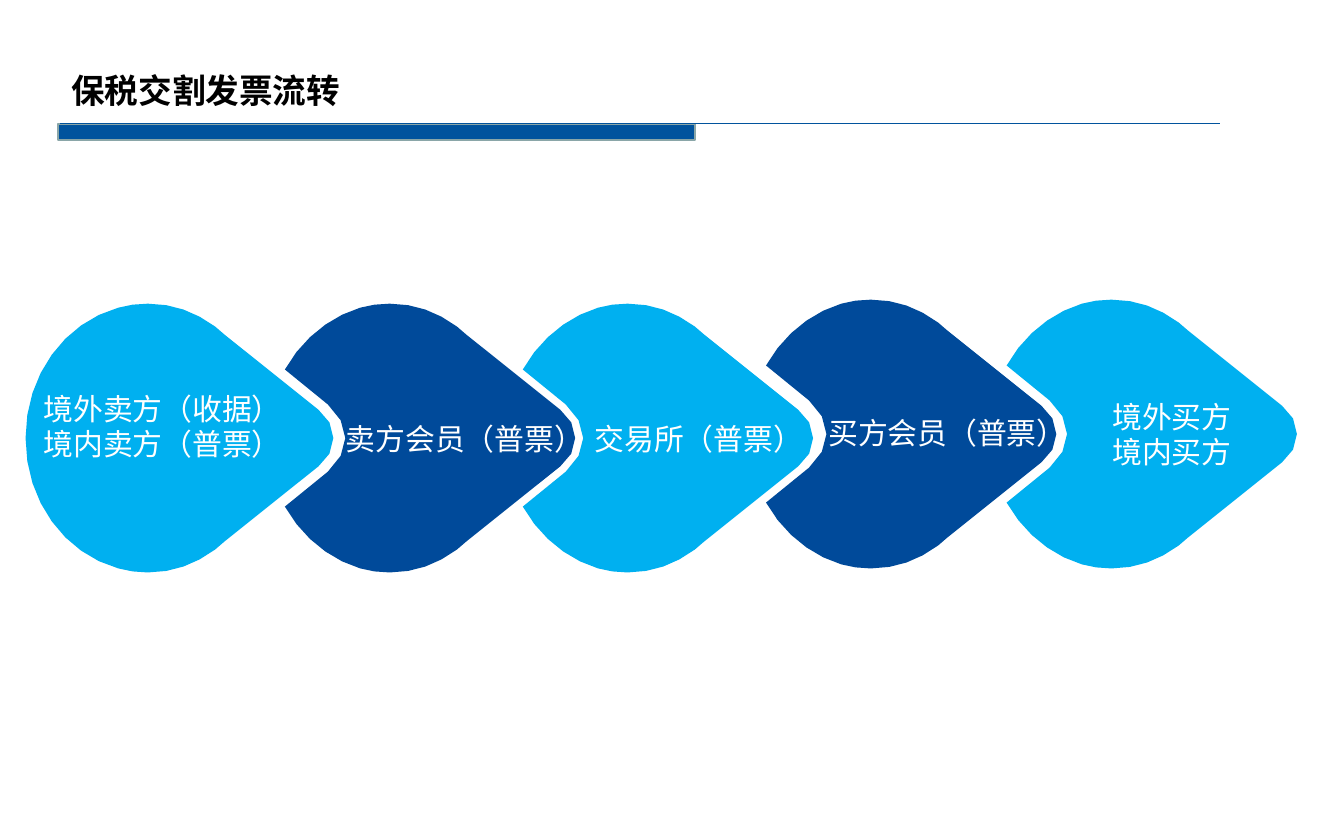
from math import ceil, dist
from typing import NamedTuple

from lxml.etree import SubElement
from pptx import Presentation
from pptx.dml.color import RGBColor
from pptx.enum.shapes import MSO_CONNECTOR as Connector, MSO_SHAPE as Shape
from pptx.enum.text import MSO_ANCHOR as Anchor, MSO_AUTO_SIZE as AutoSize, PP_ALIGN as Align
from pptx.oxml.ns import qn
from pptx.util import Inches, Pt

FONT = "Noto Sans CJK SC"
COLORS = {
    "title": "000000",
    "label": "FFFFFF",
    "rule": "01539D",
    "bar_edge": "8AA6A8",
    "light": "00B0F0",
    "dark": "004A9A",
}
LABEL_WIDTH, LABEL_HEIGHT = 2.18, 0.44
CURVE_STEP = 0.15

Point = tuple[float, float]


class Stage(NamedTuple):
    center: Point
    color: str
    label_center: Point
    lines: list[str]


STAGES = [
    Stage((1.10, 3.26), "light", (1.21, 3.17), ["境外卖方（收据）", "境内卖方（普票）"]),
    Stage((2.90, 3.26), "dark", (3.46, 3.26), ["卖方会员（普票）"]),
    Stage((4.67, 3.26), "light", (5.20, 3.26), ["交易所（普票）"]),
    Stage((6.48, 3.23), "dark", (7.05, 3.22), ["买方会员（普票）"]),
    Stage((8.27, 3.23), "light", (8.72, 3.23), ["境外买方", "境内买方"]),
]

# Upper half of a drop around its centre, from the tip to the left;
# each segment is one end point or two Bezier controls and an end point
TIP = (1.38, 0)
SHOULDER = [
    [(1.38, -0.08), (1.34, -0.16), (1.27, -0.21)],
    [(0.57, -0.77)],
    [(0.50, -0.83)],
    [(0.35, -0.94), (0.19, -1), (0, -1)],
    [(-0.08, -1), (-0.15, -0.99), (-0.22, -0.97)],
]
ROUND_BACK = [[(-0.62, -0.86), (-0.91, -0.47), (-0.91, 0)]]
NOTCHED_BACK = [
    [(-0.45, -0.90), (-0.65, -0.74), (-0.78, -0.51)],
    [(-0.46, -0.25)],
    [(-0.38, -0.18), (-0.33, -0.09), (-0.33, 0)],
]


def rgb(name: str) -> RGBColor:
    return RGBColor.from_string(COLORS[name])


def write_text(shape, lines: list[str], *, size: float, color: str, bold: bool = False,
               align=Align.LEFT, anchor=Anchor.TOP, inset: Point = (0, 0)) -> None:
    frame = shape.text_frame
    frame.word_wrap = True
    frame.auto_size = AutoSize.NONE
    frame.vertical_anchor = anchor
    frame.margin_left = frame.margin_right = Inches(inset[0])
    frame.margin_top = frame.margin_bottom = Inches(inset[1])
    for index, line in enumerate(lines):
        paragraph = frame.add_paragraph() if index else frame.paragraphs[0]
        paragraph.alignment = align
        run = paragraph.add_run()
        run.text = line
        font = run.font
        font.size, font.bold, font.name = Pt(size), bold, FONT
        font.color.rgb = rgb(color)
        SubElement(run._r.get_or_add_rPr(), qn("a:ea"), typeface=FONT)


def trace(start: Point, segments: list[list[Point]]) -> list[Point]:
    """Turn lines and Bezier curves into points, with more of them on longer curves."""
    points = [start]
    for segment in segments:
        if len(segment) == 1:
            points.append(segment[0])
            continue
        corners = [points[-1], *segment]
        steps = ceil(dist(corners[0], corners[-1]) / CURVE_STEP)
        for step in range(1, steps + 1):
            t = step / steps
            weights = ((1 - t) ** 3, 3 * t * (1 - t) ** 2, 3 * t * t * (1 - t), t ** 3)
            x, y = (sum(w * c[axis] for w, c in zip(weights, corners)) for axis in (0, 1))
            points.append((x, y))
    return points


def draw_drop(slide, stage: Stage, back: list[list[Point]]) -> None:
    upper = trace(TIP, SHOULDER + back)
    lower = [(x, -y) for x, y in reversed(upper[1:-1])]
    center_x, center_y = stage.center
    outline = [(Inches(center_x + x), Inches(center_y + y)) for x, y in upper + lower]
    builder = slide.shapes.build_freeform(*outline[0])
    builder.add_line_segments(outline[1:], close=True)
    drop = builder.convert_to_shape()
    drop.shadow.inherit = False
    drop.fill.solid()
    drop.fill.fore_color.rgb = rgb(stage.color)
    drop.line.fill.background()


def draw_label(slide, stage: Stage) -> None:
    x, y = stage.label_center
    label = slide.shapes.add_textbox(Inches(x - LABEL_WIDTH / 2), Inches(y - LABEL_HEIGHT / 2),
                                     Inches(LABEL_WIDTH), Inches(LABEL_HEIGHT))
    write_text(label, stage.lines, size=16, color="label", align=Align.CENTER, anchor=Anchor.MIDDLE)


def draw_header(slide) -> None:
    # Title
    title = slide.shapes.title
    title.left, title.top = Inches(0.43), Inches(0.47)
    title.width, title.height = Inches(5.04), Inches(0.4)
    write_text(title, ["保税交割发票流转"], size=18, color="title", bold=True, inset=(0.1, 0.05))

    # Bar and rule under the title
    bar = slide.shapes.add_shape(Shape.RECTANGLE, Inches(0.43), Inches(0.92),
                                 Inches(4.74), Inches(0.12))
    bar.shadow.inherit = False
    bar.fill.solid()
    bar.fill.fore_color.rgb = rgb("rule")
    bar.line.color.rgb = rgb("bar_edge")
    bar.line.width = Pt(1)
    rule = slide.shapes.add_connector(Connector.STRAIGHT, Inches(0.45), Inches(0.92),
                                      Inches(9.08), Inches(0.92))
    rule.line.color.rgb = rgb("rule")
    rule.line.width = Pt(0.5)
    SubElement(rule._element.spPr, qn("a:effectLst"))


def main() -> None:
    presentation = Presentation()
    presentation.slide_width, presentation.slide_height = Inches(10), Inches(6.25)
    slide = presentation.slides.add_slide(presentation.slide_layouts[5])
    draw_header(slide)

    # Chain of drops, the first with a round back, then the labels on top
    for index, stage in enumerate(STAGES):
        draw_drop(slide, stage, NOTCHED_BACK if index else ROUND_BACK)
    for stage in STAGES:
        draw_label(slide, stage)
    presentation.save("out.pptx")


if __name__ == "__main__":
    main()
